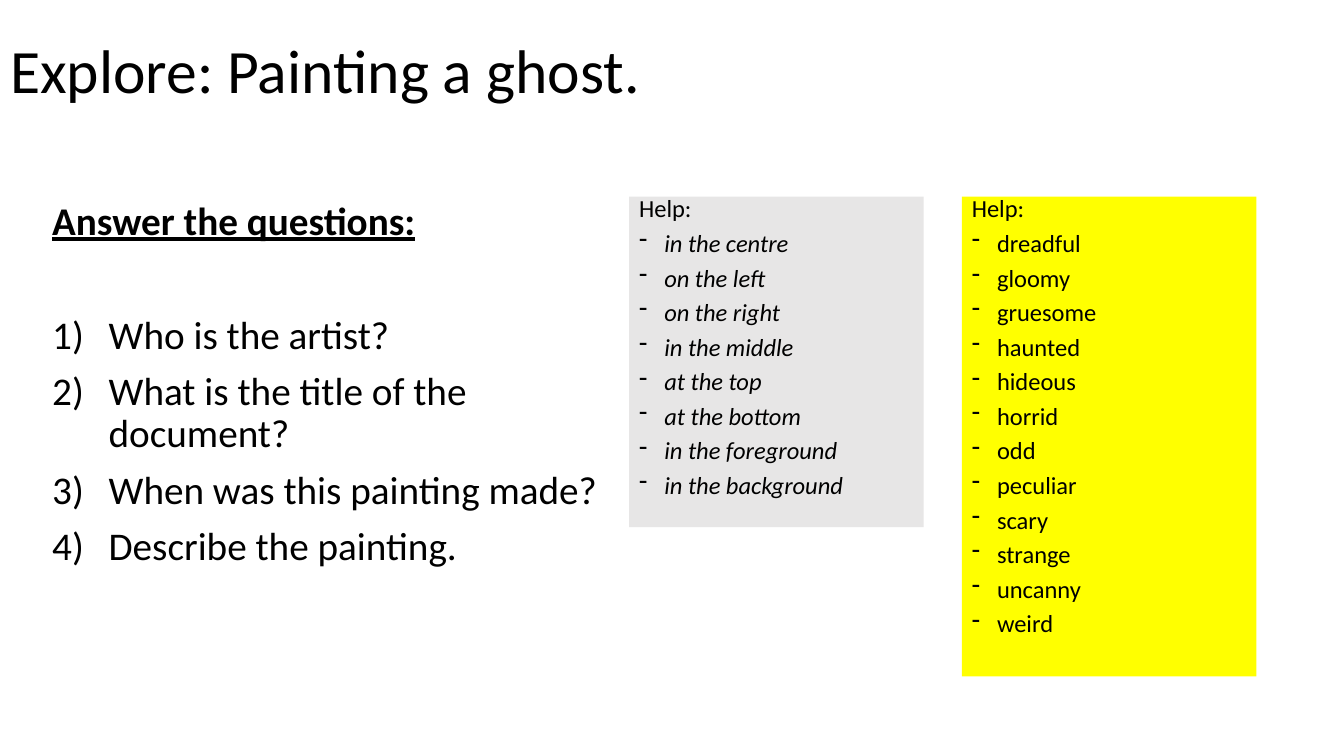
from lxml.etree import SubElement
from pptx import Presentation
from pptx.dml.color import RGBColor
from pptx.enum.shapes import MSO_SHAPE as Shape
from pptx.enum.text import MSO_ANCHOR as Anchor, MSO_AUTO_SIZE as AutoSize, PP_ALIGN as Align
from pptx.oxml.ns import qn
from pptx.util import Inches, Pt

COLORS = {"text": "000000", "places": "E7E6E6", "adjectives": "FFFF00"}
FONT = "Calibri"
TOP, HELP_WIDTH = 1.95, 2.92
QUESTIONS = ["Who is the artist?", "What is the title of the document?",
             "When was this painting made?", "Describe the painting."]
PLACES = ["in the centre", "on the left", "on the right", "in the middle", "at the top",
          "at the bottom", "in the foreground", "in the background"]
ADJECTIVES = ["dreadful", "gloomy", "gruesome", "haunted", "hideous", "horrid", "odd",
              "peculiar", "scary", "strange", "uncanny", "weird"]


class Worksheet:
    """Builds the worksheet slide in one shared text style."""

    def __init__(self, deck):
        self.slide = deck.slides.add_slide(deck.slide_layouts[5])

    def style(self, paragraph, text, size, spacing=0.9, before=10, **emphasis):
        paragraph.text = text
        paragraph.alignment = Align.LEFT
        paragraph.line_spacing = spacing
        paragraph.space_before = Pt(before)
        font = paragraph.font
        font.name, font.size = FONT, Pt(size)
        font.color.rgb = RGBColor.from_string(COLORS["text"])
        for trait, value in emphasis.items():
            setattr(font, trait, value)

    def bullet(self, paragraph, indent, tag, **attributes):
        properties = paragraph._p.get_or_add_pPr()
        properties.set("marL", str(Inches(indent)))
        properties.set("indent", str(-Inches(indent)))
        SubElement(properties, qn(tag), attributes)

    def title(self, text):
        heading = self.slide.shapes.title
        heading.left, heading.top = Inches(0), Inches(0)
        heading.width, heading.height = Inches(11.5), Inches(1.45)
        heading.text_frame.vertical_anchor = Anchor.MIDDLE
        heading.text_frame.auto_size = AutoSize.NONE
        self.style(heading.text_frame.paragraphs[0], text, 44, before=0)

    def questions(self, heading, items):
        box = self.slide.shapes.add_textbox(Inches(0.42), Inches(TOP), Inches(5.64), Inches(4.76))
        frame = box.text_frame
        frame.word_wrap = True
        self.style(frame.paragraphs[0], heading, 28, bold=True, underline=True)
        frame.paragraphs[0].space_after = Pt(41)
        for item in items:
            paragraph = frame.add_paragraph()
            paragraph.space_before, paragraph.line_spacing = Pt(10), 0.9
            self.bullet(paragraph, 0.56, "a:buAutoNum", type="arabicParenR")
            self.style(paragraph, item, 28)

    def help_box(self, left, height, fill, words, italic=False):
        box = self.slide.shapes.add_shape(
            Shape.RECTANGLE, Inches(left), Inches(TOP), Inches(HELP_WIDTH), Inches(height))
        box.shadow.inherit = False
        box.fill.solid()
        box.fill.fore_color.rgb = RGBColor.from_string(COLORS[fill])
        box.line.fill.background()
        frame = box.text_frame
        frame.word_wrap = True
        frame.vertical_anchor = Anchor.TOP
        self.style(frame.paragraphs[0], "Help:", 17.5, 0.7)
        for word in words:
            paragraph = frame.add_paragraph()
            self.bullet(paragraph, 0.25, "a:buChar", char="-")
            self.style(paragraph, word, 17.5, 0.7, italic=italic)


def main():
    deck = Presentation()
    deck.slide_width, deck.slide_height = Inches(13.33), Inches(7.5)
    sheet = Worksheet(deck)
    sheet.title("Explore: Painting a ghost.")
    sheet.questions("Answer the questions:", QUESTIONS)
    sheet.help_box(6.24, 3.28, "places", PLACES, italic=True)
    sheet.help_box(9.54, 4.76, "adjectives", ADJECTIVES)
    deck.save("out.pptx")


if __name__ == "__main__":
    main()
